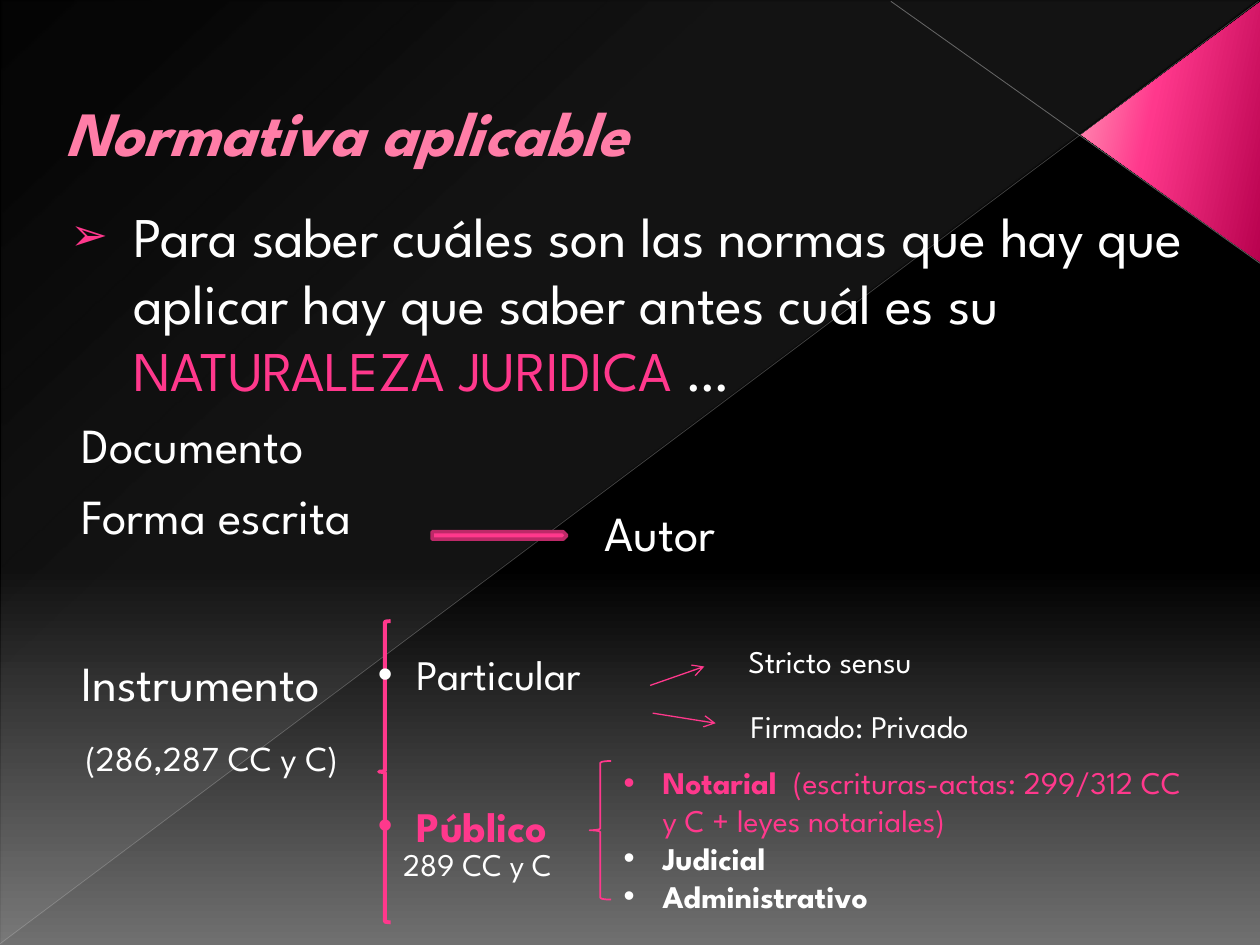
from dataclasses import dataclass
from typing import NamedTuple, Optional

from lxml.etree import SubElement
from pptx import Presentation
from pptx.dml.color import RGBColor
from pptx.enum.shapes import MSO_CONNECTOR, MSO_SHAPE
from pptx.enum.text import MSO_ANCHOR
from pptx.oxml.ns import qn
from pptx.util import Emu, Inches, Pt

SLIDE_WIDTH, SLIDE_HEIGHT = Inches(10), Inches(7.5)
COLUMNS, ROWS = 100, 75
FONT = "League Spartan"
WHITE, PINK = "FFFFFF", "FF388C"
BULLET_INDENT = 3.1


class Area(NamedTuple):
    column: float
    row: float
    columns: float
    rows: float


class Stop(NamedTuple):
    position: int
    color: str
    opacity: int = 100


class Run(NamedTuple):
    text: str
    color: str = WHITE
    bold: bool = False


@dataclass
class Line:
    runs: list[Run]
    size: float
    indent: float = 0
    hanging: float = 0
    before: float = 0
    bullet: str = ""
    bullet_color: str = WHITE
    bullet_size: int = 100


@dataclass
class TextBlock:
    area: Area
    lines: list[Line]
    wrap: bool = True


@dataclass
class Stroke:
    start: tuple[float, float]
    end: tuple[float, float]
    color: str
    width: float
    opacity: int = 100
    arrow: bool = False


def across(columns: float) -> Emu:
    return Emu(round(SLIDE_WIDTH * columns / COLUMNS))


def down(rows: float) -> Emu:
    return Emu(round(SLIDE_HEIGHT * rows / ROWS))


def place(area: Area) -> tuple[Emu, Emu, Emu, Emu]:
    return across(area.column), down(area.row), across(area.columns), down(area.rows)


def rgb(color: str) -> RGBColor:
    return RGBColor.from_string(color)


def add_color(parent, color: str, opacity: int = 100) -> None:
    element = SubElement(parent, qn("a:srgbClr"), val=color)
    if opacity < 100:
        SubElement(element, qn("a:alpha"), val=str(opacity * 1000))


def paint_gradient(fill, owner, stops: list[Stop], angle: int) -> None:
    fill.gradient()
    gradient = next(owner.iter(qn("a:gradFill")))
    stop_list = gradient.find(qn("a:gsLst"))
    for old in list(stop_list):
        stop_list.remove(old)
    for stop in stops:
        element = SubElement(stop_list, qn("a:gs"), pos=str(stop.position * 1000))
        add_color(element, stop.color, stop.opacity)
    gradient.find(qn("a:lin")).set("ang", str(angle * 60000))


def write(paragraph, text: str, *, size: float, color: str = WHITE,
          bold: bool = False, italic: bool = False, outline: str = "") -> None:
    run = paragraph.add_run()
    run.text = text
    font = run.font
    font.name, font.size, font.bold, font.italic = FONT, Pt(size), bold, italic
    font.color.rgb = rgb(color)
    if outline:
        properties = run._r.get_or_add_rPr()
        edge = SubElement(properties, qn("a:ln"), w=str(Pt(0.5)))
        add_color(SubElement(edge, qn("a:solidFill")), outline)
        properties.insert(0, edge)


def format_line(paragraph, line: Line) -> None:
    paragraph.space_before = Pt(line.before)
    properties = paragraph._p.get_or_add_pPr()
    properties.set("marL", str(across(line.indent)))
    properties.set("indent", str(-across(line.hanging)))
    if line.bullet:
        add_color(SubElement(properties, qn("a:buClr")), line.bullet_color)
        SubElement(properties, qn("a:buSzPct"), val=str(line.bullet_size * 1000))
        SubElement(properties, qn("a:buFont"), typeface="Arial")
        SubElement(properties, qn("a:buChar"), char=line.bullet)


def add_frame(slide, area: Area, wrap: bool = True):
    frame = slide.shapes.add_textbox(*place(area)).text_frame
    frame.word_wrap = wrap
    return frame


def add_text(slide, block: TextBlock) -> None:
    frame = add_frame(slide, block.area, block.wrap)
    for index, line in enumerate(block.lines):
        paragraph = frame.add_paragraph() if index else frame.paragraphs[0]
        format_line(paragraph, line)
        for run in line.runs:
            write(paragraph, run.text, size=line.size, color=run.color, bold=run.bold)


def add_figure(slide, kind: MSO_SHAPE, area: Area, *, adjustment: Optional[float] = None,
               flip: bool = False, line: str = "", width: float = 0):
    shape = slide.shapes.add_shape(kind, *place(area))
    shape.shadow.inherit = False
    shape.fill.background()
    if adjustment is not None:
        shape.adjustments[0] = adjustment
    if flip:
        shape._element.spPr.find(qn("a:xfrm")).set("flipV", "1")
    if line:
        shape.line.color.rgb = rgb(line)
        shape.line.width = Pt(width)
    else:
        shape.line.fill.background()
    return shape


def add_stroke(slide, stroke: Stroke) -> None:
    (x1, y1), (x2, y2) = stroke.start, stroke.end
    connector = slide.shapes.add_connector(
        MSO_CONNECTOR.STRAIGHT, across(x1), down(y1), across(x2), down(y2))
    connector.line.width = Pt(stroke.width)
    connector.line.color.rgb = rgb(stroke.color)
    properties = connector._element.spPr
    edge = properties.find(qn("a:ln"))
    if stroke.opacity < 100:
        color = next(edge.iter(qn("a:srgbClr")))
        SubElement(color, qn("a:alpha"), val=str(stroke.opacity * 1000))
    if stroke.arrow:
        SubElement(edge, qn("a:tailEnd"), type="arrow")
    SubElement(properties, qn("a:effectLst"))


def add_backdrop(slide) -> None:
    paint_gradient(slide.background.fill, slide._element,
                   [Stop(0, "000000"), Stop(60, "000000"), Stop(100, "707070")], 90)
    veil = add_figure(slide, MSO_SHAPE.RIGHT_TRIANGLE, Area(0.1, 0.1, 99.8, 74.8), flip=True)
    paint_gradient(veil.fill, veil._element,
                   [Stop(0, "D2D2D2", 10), Stop(70, "D2D2D2", 8), Stop(100, "D2D2D2", 1)], 133)
    corner = add_figure(slide, MSO_SHAPE.ISOSCELES_TRIANGLE, Area(82.6, 3.4, 20.7, 14.2),
                        adjustment=0.51, flip=True)
    corner.rotation = 90
    paint_gradient(corner.fill, corner._element,
                   [Stop(0, "B8014E"), Stop(60, PINK), Stop(100, "FF9CB9")], 258)


def bulleted(runs: list[Run], size: float, before: float = 0) -> Line:
    return Line(runs, size, BULLET_INDENT, BULLET_INDENT, before, "•", runs[0].color)


STROKES = [
    Stroke((100, 20.9), (70.7, 0.1), "C6C6C6", 0.47, opacity=45),
    Stroke((0, 74.9), (99.9, 0.1), "BFBFBF", 0.39, opacity=35),
    Stroke((51.6, 54.4), (55.9, 52.9), PINK, 0.75, arrow=True),
    Stroke((51.8, 56.6), (56.8, 57.4), PINK, 0.75, arrow=True),
]

BLOCKS = [
    TextBlock(Area(4, 15.5, 94, 59.5), [
        Line([Run("Para saber cuáles son las normas que hay que aplicar hay que saber antes cuál es su "),
              Run("NATURALEZA JURIDICA ", PINK), Run("…")],
             32, 5.6, 5, 7.5, "➢", PINK, 80),
        Line([Run("Documento")], 28, 1.5, before=6.7),
        Line([Run("Forma escrita")], 28, 1.5, before=6.7),
        Line([Run("Instrumento")], 28, 1.5, before=62),
        Line([Run("(286,287 CC y C)")], 20, 1.8, before=14),
    ]),
    TextBlock(Area(47, 39.4, 19.7, 5.7), [Line([Run("Autor")], 28)]),
    TextBlock(Area(29, 51, 62.8, 17.2), [
        bulleted([Run("Particular")], 24),
        bulleted([Run("Público", PINK, True)], 24, before=57.6),
    ]),
    TextBlock(Area(58.4, 50.5, 16.9, 4), [Line([Run("Stricto sensu")], 18)], wrap=False),
    TextBlock(Area(58.6, 55.6, 29.6, 7.1), [Line([Run("Firmado: Privado")], 18)]),
    TextBlock(Area(48.5, 60.1, 47.2, 13.1), [
        bulleted([Run("Notarial ", PINK, True),
                  Run(" (escrituras-actas: 299/312 CC y C + leyes notariales)", PINK)], 18),
        bulleted([Run("Judicial", bold=True)], 18),
        bulleted([Run("Administrativo", bold=True)], 18),
    ]),
    TextBlock(Area(31, 66.6, 15.8, 4), [Line([Run("289 CC y C")], 18)], wrap=False),
]


def main() -> None:
    presentation = Presentation()
    presentation.slide_width, presentation.slide_height = SLIDE_WIDTH, SLIDE_HEIGHT
    slide = presentation.slides.add_slide(presentation.slide_layouts[6])
    add_backdrop(slide)
    for stroke in STROKES:
        add_stroke(slide, stroke)
    title = add_frame(slide, Area(4.2, 3, 79.2, 14.9))
    title.vertical_anchor = MSO_ANCHOR.MIDDLE
    write(title.paragraphs[0], "Normativa aplicable", size=36, color="FF7DA7",
          bold=True, italic=True, outline="B12761")
    arrow = add_figure(slide, MSO_SHAPE.RIGHT_ARROW, Area(34.3, 42.2, 10.7, 0.6),
                       adjustment=1, line="BD2968", width=2)
    arrow.fill.solid()
    arrow.fill.fore_color.rgb = rgb(PINK)
    for area, width in ((Area(30.1, 49.3, 0.9, 23.9), 2.25), (Area(46.8, 60.4, 1.7, 11), 1)):
        add_figure(slide, MSO_SHAPE.LEFT_BRACE, area, line=PINK, width=width)
    for block in BLOCKS:
        add_text(slide, block)
    presentation.save("out.pptx")


if __name__ == "__main__":
    main()
